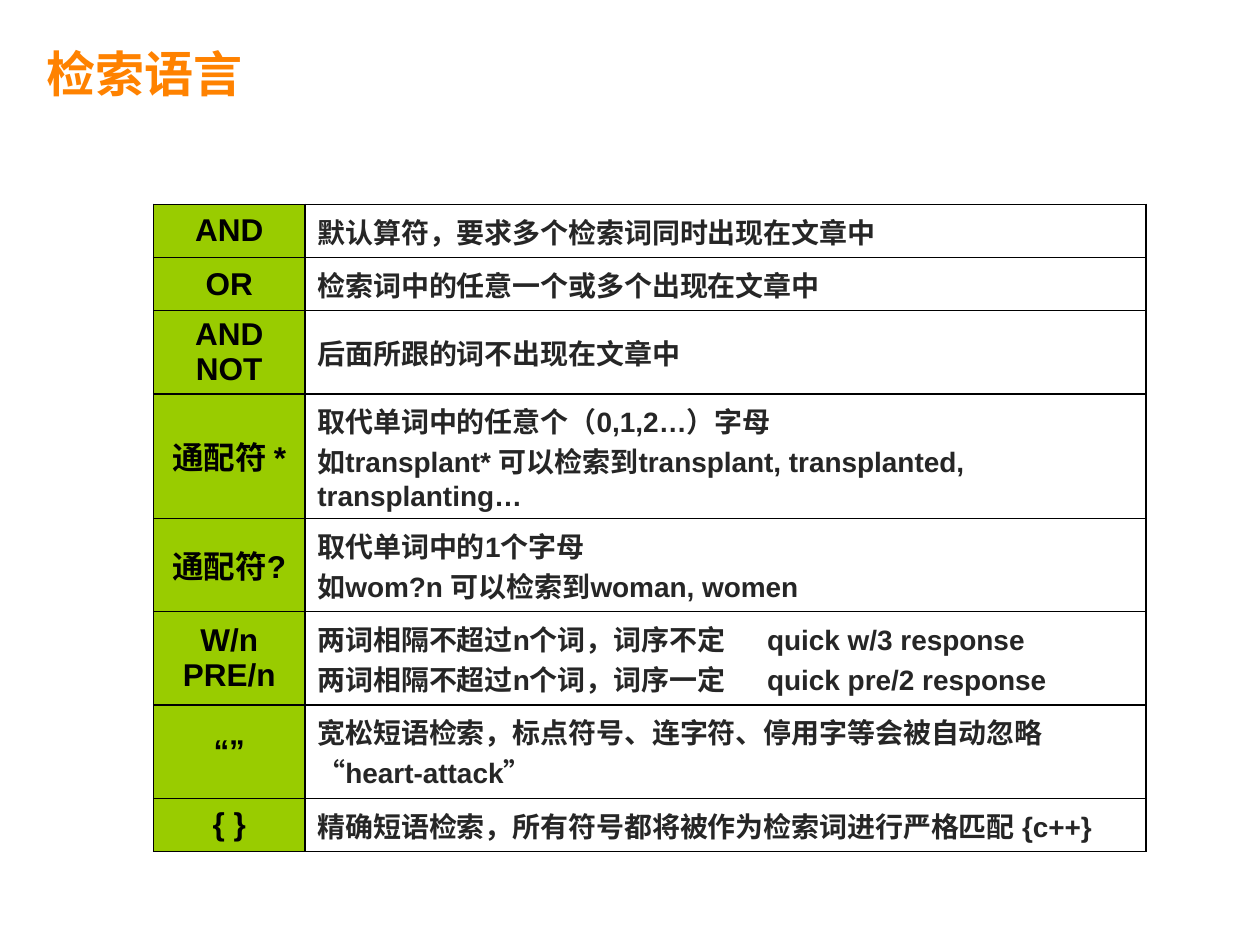
"""Build a slide that explains the operators of a search language."""
from dataclasses import dataclass

from lxml.etree import SubElement
from pptx import Presentation
from pptx.dml.color import RGBColor
from pptx.enum.text import MSO_ANCHOR, PP_ALIGN
from pptx.oxml.ns import qn
from pptx.util import Pt


@dataclass(frozen=True)
class Theme:
    title: str = "FF8200"
    key: str = "000000"
    body: str = "262626"
    key_fill: str = "99CC00"
    border: str = "000000"
    title_size: int = 28
    key_size: int = 18
    body_size: int = 16
    latin: str = "Arial"
    cjk: str = "Noto Sans CJK SC"


theme = Theme()


def write(tf, text, *, size, color, font=theme.latin, align=PP_ALIGN.LEFT, tab=None):
    for i, line in enumerate(text.split("\n")):
        p = tf.paragraphs[0] if i == 0 else tf.add_paragraph()
        p.text = line
        p.alignment = align
        if tab and "\t" in line:
            tabs = SubElement(p._p.get_or_add_pPr(), qn("a:tabLst"))
            SubElement(tabs, qn("a:tab"), pos=str(tab), algn="l")
        for r in p.runs:
            r.font.name = font
            r.font.size = Pt(size)
            r.font.bold = True
            r.font.color.rgb = RGBColor.from_string(color)
            SubElement(r.font._element, qn("a:ea"), typeface=theme.cjk)


def add_borders(cell):
    tc_pr = cell._tc.get_or_add_tcPr()
    for side in ("lnL", "lnR", "lnT", "lnB"):
        ln = SubElement(tc_pr, qn(f"a:{side}"), w=str(Pt(1)))
        fill = SubElement(ln, qn("a:solidFill"))
        SubElement(fill, qn("a:srgbClr"), val=theme.border)


prs = Presentation()
prs.slide_width, prs.slide_height = Pt(720), Pt(540)
s = prs.slides.add_slide(prs.slide_layouts[5])

title = s.shapes.title
title.left, title.top, title.width, title.height = Pt(26.6), Pt(21), Pt(277), Pt(41)
tf = title.text_frame
tf.margin_left = tf.margin_right = 0
tf.vertical_anchor = MSO_ANCHOR.TOP
write(tf, "检索语言", size=theme.title_size, color=theme.title, font=theme.cjk)

rows = [
    (30.4, "AND", "默认算符，要求多个检索词同时出现在文章中"),
    (30.4, "OR", "检索词中的任意一个或多个出现在文章中"),
    (47, "AND NOT", "后面所跟的词不出现在文章中"),
    (47, "通配符 *", "取代单词中的任意个（0,1,2…）字母\v"
                 "如transplant* 可以检索到transplant, transplanted, transplanting…"),
    (47, "通配符?", "取代单词中的1个字母\n如wom?n 可以检索到woman, women"),
    (52, "W/n\nPRE/n", "两词相隔不超过n个词，词序不定\tquick w/3 response\n"
                       "两词相隔不超过n个词，词序一定\tquick pre/2 response"),
    (30.4, "“”", "宽松短语检索，标点符号、连字符、停用字等会被自动忽略 “heart-attack”"),
    (30.4, "{ }", "精确短语检索，所有符号都将被作为检索词进行严格匹配 {c++}"),
]
widths = (86.4, 480.6)
height = sum(row[0] for row in rows)
table = s.shapes.add_table(len(rows), 2, Pt(87.8), Pt(116.8), Pt(sum(widths)), Pt(height)).table
table.first_row = table.horz_banding = False
for column, width in zip(table.columns, widths):
    column.width = Pt(width)

for i, (row_height, key, meaning) in enumerate(rows):
    table.rows[i].height = Pt(row_height)
    key_cell, body_cell = table.rows[i].cells
    for cell in (key_cell, body_cell):
        cell.vertical_anchor = MSO_ANCHOR.MIDDLE
        add_borders(cell)
    key_cell.fill.solid()
    key_cell.fill.fore_color.rgb = RGBColor.from_string(theme.key_fill)
    body_cell.fill.background()
    write(key_cell.text_frame, key, size=theme.key_size, color=theme.key, align=PP_ALIGN.CENTER)
    write(body_cell.text_frame, meaning, size=theme.body_size, color=theme.body, tab=Pt(257))

prs.save("out.pptx")
